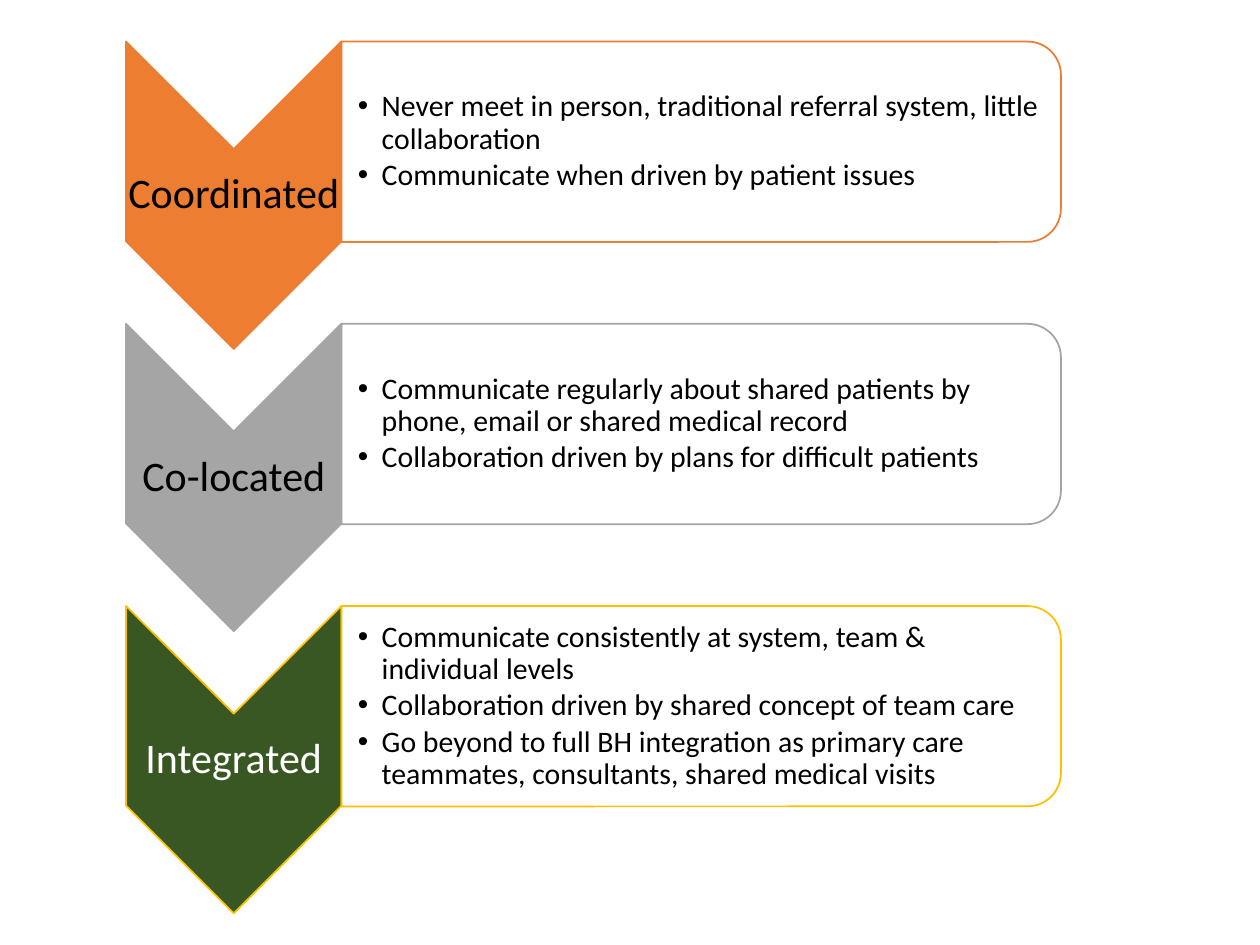
from dataclasses import dataclass

from lxml.etree import SubElement
from pptx import Presentation
from pptx.dml.color import RGBColor
from pptx.enum.shapes import MSO_SHAPE
from pptx.enum.text import MSO_ANCHOR, PP_ALIGN
from pptx.oxml.ns import qn
from pptx.util import Inches, Pt


@dataclass(frozen=True)
class Theme:
    font: str = "Calibri"
    label_size: int = 24
    body_size: int = 17
    line_width: int = 1
    black: str = "000000"
    white: str = "FFFFFF"
    orange: str = "ED7D31"
    gray: str = "A5A5A5"
    green: str = "385723"
    gold: str = "FFC000"


theme = Theme()

# label, chevron fill, outline, label colour, bullets
levels = [
    ("Coordinated", theme.orange, theme.orange, theme.black, [
        "Never meet in person, traditional referral system, little collaboration",
        "Communicate when driven by patient issues",
    ]),
    ("Co-located", theme.gray, theme.gray, theme.black, [
        "Communicate regularly about shared patients by phone, email or shared medical record",
        "Collaboration driven by plans for difficult patients",
    ]),
    ("Integrated", theme.green, theme.gold, theme.white, [
        "Communicate consistently at system, team & individual levels",
        "Collaboration driven by shared concept of team care",
        "Go beyond to full BH integration as primary care teammates, consultants, shared medical visits",
    ]),
]


def add_turned_shape(shapes, kind, left, top, width, height, fill, line):
    """Add a shape turned a quarter clockwise that covers the given visible box."""
    shape = shapes.add_shape(
        kind,
        Inches(left + (width - height) / 2), Inches(top + (height - width) / 2),
        Inches(height), Inches(width),
    )
    shape.rotation = 90
    shape.shadow.inherit = False
    shape.fill.solid()
    shape.fill.fore_color.rgb = RGBColor.from_string(fill)
    shape.line.color.rgb = RGBColor.from_string(line)
    shape.line.width = Pt(theme.line_width)
    return shape


def add_text(shapes, lines, left, top, width, height, *, size, color, inset, left_inset,
             align=PP_ALIGN.LEFT, space_after=0, bullet_indent=None):
    box = shapes.add_textbox(Inches(left), Inches(top), Inches(width), Inches(height))
    frame = box.text_frame
    frame.word_wrap = True
    frame.vertical_anchor = MSO_ANCHOR.MIDDLE
    frame.margin_left = Inches(left_inset)
    frame.margin_top = frame.margin_right = frame.margin_bottom = Inches(inset)
    frame.text = "\n".join(lines)
    for paragraph in frame.paragraphs:
        paragraph.alignment = align
        paragraph.line_spacing = 0.9
        paragraph.space_after = Pt(space_after)
        font = paragraph.runs[0].font
        font.name = theme.font
        font.size = Pt(size)
        font.color.rgb = RGBColor.from_string(color)
        if bullet_indent:
            paragraph.level = 1
            properties = paragraph._p.get_or_add_pPr()
            properties.set("marL", str(Inches(bullet_indent)))
            properties.set("indent", str(-Inches(bullet_indent)))
            SubElement(properties, qn("a:buFont"), typeface="Arial")
            SubElement(properties, qn("a:buChar"), char="•")


presentation = Presentation()
presentation.slide_width = Inches(10)
presentation.slide_height = Inches(7.5)
slide = presentation.slides.add_slide(presentation.slide_layouts[6])
shapes = slide.shapes.add_group_shape().shapes

first_top, row_pitch = 0.33, 2.24
chevron_left, chevron_width, chevron_height = 1, 1.71, 2.44
panel_left, panel_width, panel_height = chevron_left + chevron_width, 5.71, 1.59

for row, (label, fill, outline, label_color, bullets) in enumerate(levels):
    top = first_top + row * row_pitch
    add_turned_shape(shapes, MSO_SHAPE.CHEVRON, chevron_left, top,
                     chevron_width, chevron_height, fill, outline)
    # The longest label nearly fills the chevron, so the label box has no inset.
    add_text(shapes, [label], chevron_left, top + chevron_width / 2, chevron_width, 0.73,
             size=theme.label_size, color=label_color, inset=0, left_inset=0,
             align=PP_ALIGN.CENTER)

    panel = add_turned_shape(shapes, MSO_SHAPE.ROUND_2_SAME_RECTANGLE, panel_left, top,
                             panel_width, panel_height, theme.white, outline)
    panel_color = panel._element.spPr.find(qn("a:solidFill"))[0]
    SubElement(panel_color, qn("a:alpha"), val="90000")
    add_text(shapes, bullets, panel_left, top + 0.08, 5.63, 1.43,
             size=theme.body_size, color=theme.black, inset=0.01, left_inset=0.13,
             space_after=2.55, bullet_indent=0.19)

presentation.save("out.pptx")
